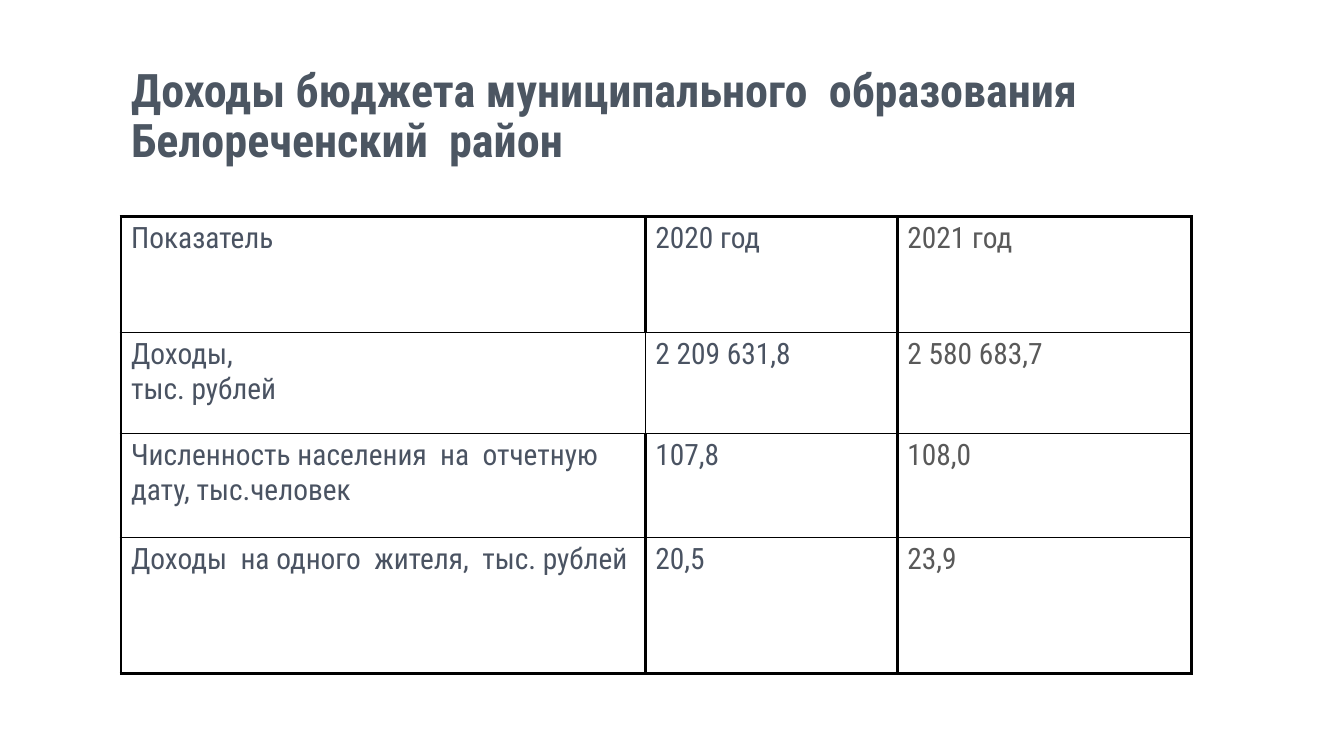
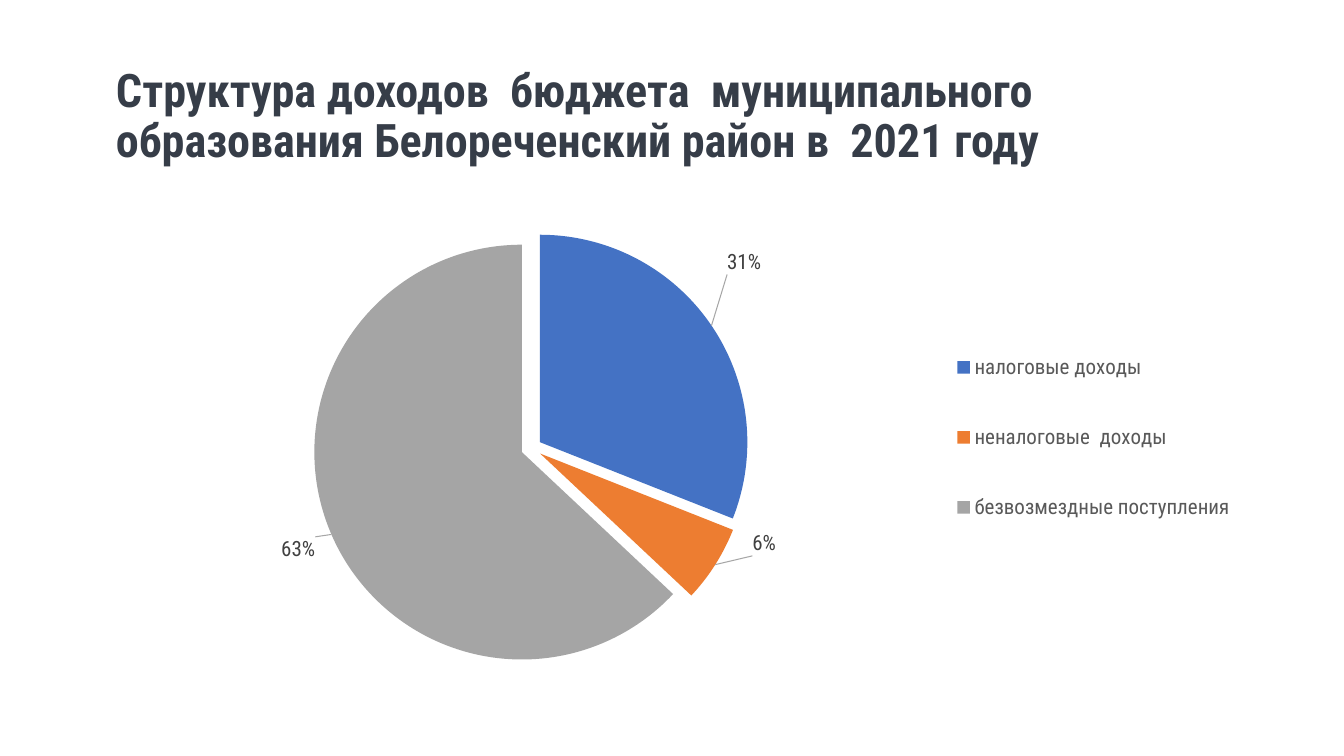
from lxml import etree
from pptx import Presentation, util as u
from pptx.chart.data import CategoryChartData
from pptx.dml.color import RGBColor
from pptx.enum import chart as ch, text
from pptx.oxml import parse_xml
from pptx.oxml.ns import nsdecls, qn

FONT = "Roboto Condensed"
COLORS = {
    "income_title": "4C5662",
    "structure_title": "363D48",
    "table_text": "4A5362",
    "muted": "595959",
    "label": "404040",
    "leader": "A6A6A6",
    "border": "000000",
}

INCOME_TITLE = "Доходы бюджета муниципального  образования Белореченский  район"
INCOME_ROWS = [
    ("Показатель", "2020 год", "2021 год"),
    ("Доходы,\nтыс. рублей", "2 209 631,8", "2 580 683,7"),
    ("Численность населения  на  отчетную дату, тыс.человек", "107,8", "108,0"),
    ("Доходы  на одного  жителя,  тыс. рублей", "20,5", "23,9"),
]
COLUMN_WIDTHS = [5.2, 2.5, 2.92]
ROW_HEIGHTS = [1.15, 1, 1.03, 1.35]
COLUMN_COLORS = ["table_text", "table_text", "muted"]
THICK, THIN = 2.25, 1

STRUCTURE_TITLE = ("Структура доходов  бюджета  муниципального  образования "
                   "Белореченский район в  2021 году")
INCOME_SHARES = [
    ("налоговые доходы", 31, "4472C4", (0.01, -0.09)),
    ("неналоговые  доходы", 6, "ED7D31", (0.03, -0.07)),
    ("безвозмездные поступления", 63, "A5A5A5", (-0.01, 0)),
]
PLOT_AREA = (0.06, 0.09, 0.56, 0.82)
LEGEND_AREA = (0.73, 0.24, 0.27, 0.48)


def style_font(font, size, color, bold=False):
    font.name = FONT
    font.size = u.Pt(size)
    font.bold = bold
    font.color.rgb = RGBColor.from_string(COLORS[color])


def write(frame, content, size, color, bold=False, spacing=None):
    frame.text = content
    for paragraph in frame.paragraphs:
        paragraph.alignment = text.PP_ALIGN.LEFT
        paragraph.line_spacing = spacing
        for run in paragraph.runs:
            style_font(run.font, size, color, bold)


def add_titled_slide(deck, content, color, left, width):
    slide = deck.slides.add_slide(deck.slide_layouts[5])
    title = slide.shapes.title
    title.left, title.top = u.Inches(left), u.Inches(0.42)
    title.width, title.height = u.Inches(width), u.Inches(1.5)
    frame = title.text_frame
    frame.word_wrap = True
    frame.auto_size = text.MSO_AUTO_SIZE.NONE
    frame.vertical_anchor = text.MSO_ANCHOR.MIDDLE
    write(frame, content, 33, color, bold=True, spacing=0.9)
    return slide


def set_borders(cell, **widths):
    properties = cell._tc.get_or_add_tcPr()
    for side in "LRTB":
        properties.append(parse_xml(
            f'<a:ln{side} {nsdecls("a")} w="{u.Pt(widths[side])}"><a:solidFill>'
            f'<a:srgbClr val="{COLORS["border"]}"/></a:solidFill></a:ln{side}>'))


def add_income_table(slide):
    table = slide.shapes.add_table(
        len(INCOME_ROWS), len(COLUMN_WIDTHS), u.Inches(1.2), u.Inches(2.15),
        u.Inches(sum(COLUMN_WIDTHS)), u.Inches(sum(ROW_HEIGHTS))).table
    table.first_row = table.horz_banding = False
    for column, width in zip(table.columns, COLUMN_WIDTHS):
        column.width = u.Inches(width)
    for row, height in zip(table.rows, ROW_HEIGHTS):
        row.height = u.Inches(height)
    last_row = len(INCOME_ROWS) - 1
    for r, values in enumerate(INCOME_ROWS):
        for c, value in enumerate(values):
            cell = table.cell(r, c)
            write(cell.text_frame, value, 21, COLUMN_COLORS[c])
            set_borders(cell,
                        L=THIN if (r, c) == (1, 1) else THICK,
                        R=THIN if (r, c) == (1, 0) else THICK,
                        T=THICK if r == 0 else THIN,
                        B=THICK if r == last_row else THIN)
            cell.fill.background()


def manual_layout(area, modes):
    values = "".join(f'<c:{name} val="{value}"/>' for name, value in zip("xywh", area))
    return parse_xml(f'<c:layout {nsdecls("c")}><c:manualLayout>{modes}{values}'
                     '</c:manualLayout></c:layout>')


def place(element, area, modes):
    for existing in element.findall(qn("c:layout")):
        element.remove(existing)
    layout = manual_layout(area, modes)
    if element.tag == qn("c:legend"):
        element.find(qn("c:legendPos")).addnext(layout)
    elif element.tag == qn("c:dLbl"):
        element.find(qn("c:idx")).addnext(layout)
    else:
        element.insert(0, layout)


def add_leader_lines(labels):
    for existing in labels.findall(qn("c:showLeaderLines")):
        labels.remove(existing)
    etree.SubElement(labels, qn("c:showLeaderLines")).set("val", "1")
    labels.append(parse_xml(
        f'<c:leaderLines {nsdecls("c", "a")}><c:spPr><a:ln w="{u.Pt(0.75)}"><a:solidFill>'
        f'<a:srgbClr val="{COLORS["leader"]}"/></a:solidFill></a:ln></c:spPr></c:leaderLines>'))


def add_structure_chart(slide):
    data = CategoryChartData()
    data.categories = [name for name, *_ in INCOME_SHARES]
    data.add_series("Доходы", [share for _, share, *_ in INCOME_SHARES])
    chart = slide.shapes.add_chart(
        ch.XL_CHART_TYPE.PIE, u.Inches(1.66), u.Inches(1.81),
        u.Inches(10.62), u.Inches(5.27), data).chart
    style_font(chart.font, 15, "border")
    chart.has_title = False
    chart.has_legend = True
    chart.legend.position = ch.XL_LEGEND_POSITION.RIGHT
    chart.legend.include_in_layout = False
    style_font(chart.legend.font, 15, "muted")
    edges = '<c:xMode val="edge"/><c:yMode val="edge"/>'
    place(chart.legend._element, LEGEND_AREA, edges)
    place(chart._chartSpace.chart.plotArea, PLOT_AREA,
          '<c:layoutTarget val="inner"/>' + edges)

    plot = chart.plots[0]
    plot.vary_by_categories = True
    shares = plot.series[0]
    shares._element.find(qn("c:cat")).addprevious(
        parse_xml(f'<c:explosion {nsdecls("c")} val="5"/>'))
    labels = shares.data_labels
    labels.show_value, labels.show_percentage = False, True
    labels.number_format, labels.number_format_is_linked = "0%", False
    labels.position = ch.XL_LABEL_POSITION.OUTSIDE_END
    style_font(labels.font, 15, "label")
    for index, (_, _, color, offset) in enumerate(INCOME_SHARES):
        point = shares.points[index]
        point.format.fill.solid()
        point.format.fill.fore_color.rgb = RGBColor.from_string(color)
        label = point.data_label
        style_font(label.font, 15, "label")
        label.position = ch.XL_LABEL_POSITION.OUTSIDE_END
        element = labels._element.findall(qn("c:dLbl"))[index]
        element.find(qn("c:showVal")).set("val", "0")
        element.find(qn("c:showPercent")).set("val", "1")
        place(element, offset, "")
    add_leader_lines(labels._element)


def main():
    deck = Presentation()
    deck.slide_width, deck.slide_height = u.Inches(13.33), u.Inches(7.5)
    add_income_table(add_titled_slide(deck, INCOME_TITLE, "income_title", 1.2, 9.97))
    add_structure_chart(add_titled_slide(deck, STRUCTURE_TITLE, "structure_title", 1.05, 11))
    deck.save("out.pptx")


if __name__ == "__main__":
    main()
